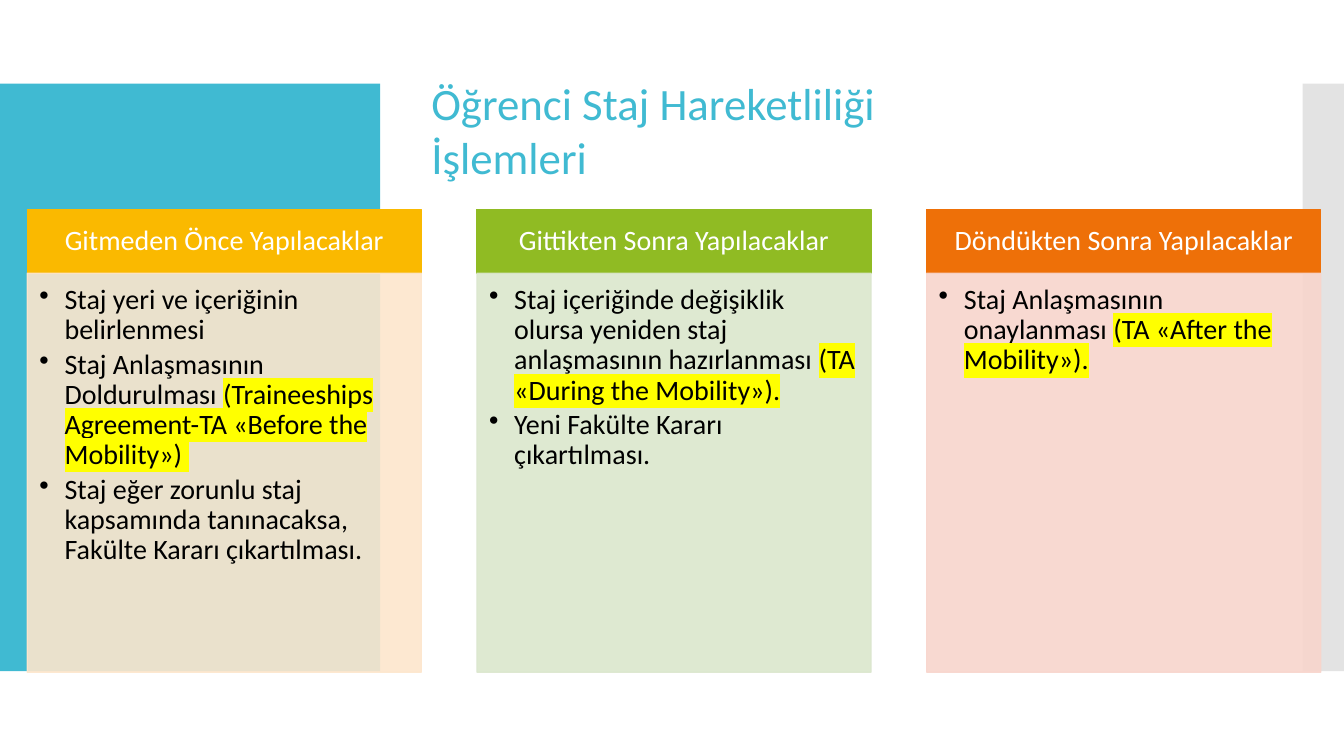
from lxml import etree
from pptx import Presentation
from pptx.dml.color import RGBColor
from pptx.enum.shapes import MSO_SHAPE
from pptx.enum.text import MSO_ANCHOR, PP_ALIGN
from pptx.oxml.ns import qn
from pptx.util import Inches, Pt

RECTANGLE = MSO_SHAPE.RECTANGLE
TOP, MIDDLE = MSO_ANCHOR.TOP, MSO_ANCHOR.MIDDLE
LEFT, CENTER = PP_ALIGN.LEFT, PP_ALIGN.CENTER
FONT = "Calibri"
TEAL = RGBColor(0x40, 0xBA, 0xD2)
GREY = RGBColor(0xC8, 0xC8, 0xC8)
WHITE = RGBColor(0xFF, 0xFF, 0xFF)
BLACK = RGBColor(0x00, 0x00, 0x00)
YELLOW = RGBColor(0xFF, 0xFF, 0x00)
AMBER, AMBER_TINT = RGBColor(0xFA, 0xB9, 0x00), RGBColor(0xFD, 0xE6, 0xCC)
GREEN, GREEN_TINT = RGBColor(0x90, 0xBB, 0x23), RGBColor(0xDB, 0xE7, 0xCD)
ORANGE, ORANGE_TINT = RGBColor(0xEE, 0x70, 0x08), RGBColor(0xF8, 0xD5, 0xCC)

COLUMN_LEFT, COLUMN_STEP, COLUMN_WIDTH = 0.27, 4.46, 3.91
HEADER_TOP, HEADER_HEIGHT, BODY_HEIGHT = 2.08, 0.63, 3.96

columns = [
    ("Gitmeden Önce Yapılacaklar", AMBER, AMBER_TINT, [
        [("Staj yeri ve içeriğinin belirlenmesi", False)],
        [("Staj Anlaşmasının Doldurulması ", False),
         ("(Traineeships Agreement-TA «Before the Mobility») ", True)],
        [("Staj eğer zorunlu staj kapsamında tanınacaksa, Fakülte Kararı çıkartılması.", False)],
    ]),
    ("Gittikten Sonra Yapılacaklar", GREEN, GREEN_TINT, [
        [("Staj içeriğinde değişiklik olursa yeniden staj anlaşmasının hazırlanması ", False),
         ("(TA «During the Mobility»).", True)],
        [("Yeni Fakülte Kararı çıkartılması.", False)],
    ]),
    ("Döndükten Sonra Yapılacaklar", ORANGE, ORANGE_TINT, [
        [("Staj Anlaşmasının onaylanması ", False),
         ("(TA «After the Mobility»).", True)],
    ]),
]

presentation = Presentation()
presentation.slide_width = Inches(13.33)
presentation.slide_height = Inches(7.5)
slide = presentation.slides.add_slide(presentation.slide_layouts[6])


def add_block(left, top, width, height, color, opacity=100, outlined=True):
    shape = slide.shapes.add_shape(
        RECTANGLE, Inches(left), Inches(top), Inches(width), Inches(height))
    shape.shadow.inherit = False
    shape.fill.solid()
    shape.fill.fore_color.rgb = color
    if outlined:
        shape.line.color.rgb = color
        shape.line.width = Pt(0.85)
    else:
        shape.line.fill.background()
    if opacity < 100:
        for color_element in shape._element.spPr.iter(qn("a:srgbClr")):
            etree.SubElement(color_element, qn("a:alpha"), val=str(opacity * 1000))
    return shape


def add_run(paragraph, text, size, color, highlighted=False):
    run = paragraph.add_run()
    run.text = text
    run.font.size = Pt(size)
    run.font.name = FONT
    run.font.color.rgb = color
    if highlighted:
        highlight = etree.Element(qn("a:highlight"))
        etree.SubElement(highlight, qn("a:srgbClr"), val=str(YELLOW))
        run.font._element.find(qn("a:solidFill")).addnext(highlight)


add_block(0, 0.83, 3.77, 5.83, TEAL, outlined=False)
add_block(12.92, 0.83, 0.41, 5.83, GREY, opacity=50, outlined=False)

for index, (heading, color, tint, items) in enumerate(columns):
    left = COLUMN_LEFT + index * COLUMN_STEP
    header = add_block(left, HEADER_TOP, COLUMN_WIDTH, HEADER_HEIGHT, color)
    body = add_block(left, HEADER_TOP + HEADER_HEIGHT, COLUMN_WIDTH, BODY_HEIGHT, tint, opacity=90)

    for shape, anchor, margins in (
        (header, MIDDLE, (0.16, 0.09, 0.16, 0.09)),
        (body, TOP, (0.12, 0.12, 0.16, 0.17)),
    ):
        frame = shape.text_frame
        frame.word_wrap = True
        frame.vertical_anchor = anchor
        (frame.margin_left, frame.margin_top,
         frame.margin_right, frame.margin_bottom) = map(Inches, margins)

    paragraph = header.text_frame.paragraphs[0]
    paragraph.alignment = CENTER
    paragraph.line_spacing = 0.9
    add_run(paragraph, heading, 20, WHITE)

    frame = body.text_frame
    for number, runs in enumerate(items):
        paragraph = frame.add_paragraph() if number else frame.paragraphs[0]
        paragraph.alignment = LEFT
        paragraph.line_spacing = 0.9
        paragraph.space_after = Pt(3)
        properties = paragraph._p.get_or_add_pPr()
        properties.set("marL", str(Inches(0.25)))
        properties.set("indent", str(Inches(-0.25)))
        etree.SubElement(properties, qn("a:buChar"), char="•")
        for text, highlighted in runs:
            add_run(paragraph, text, 20, BLACK, highlighted)

title = slide.shapes.add_textbox(Inches(4.18), Inches(0.7), Inches(5.9), Inches(1.18))
title.text_frame.word_wrap = True
add_run(title.text_frame.paragraphs[0], "Öğrenci Staj Hareketliliği İşlemleri", 32, TEAL)

presentation.save("out.pptx")
